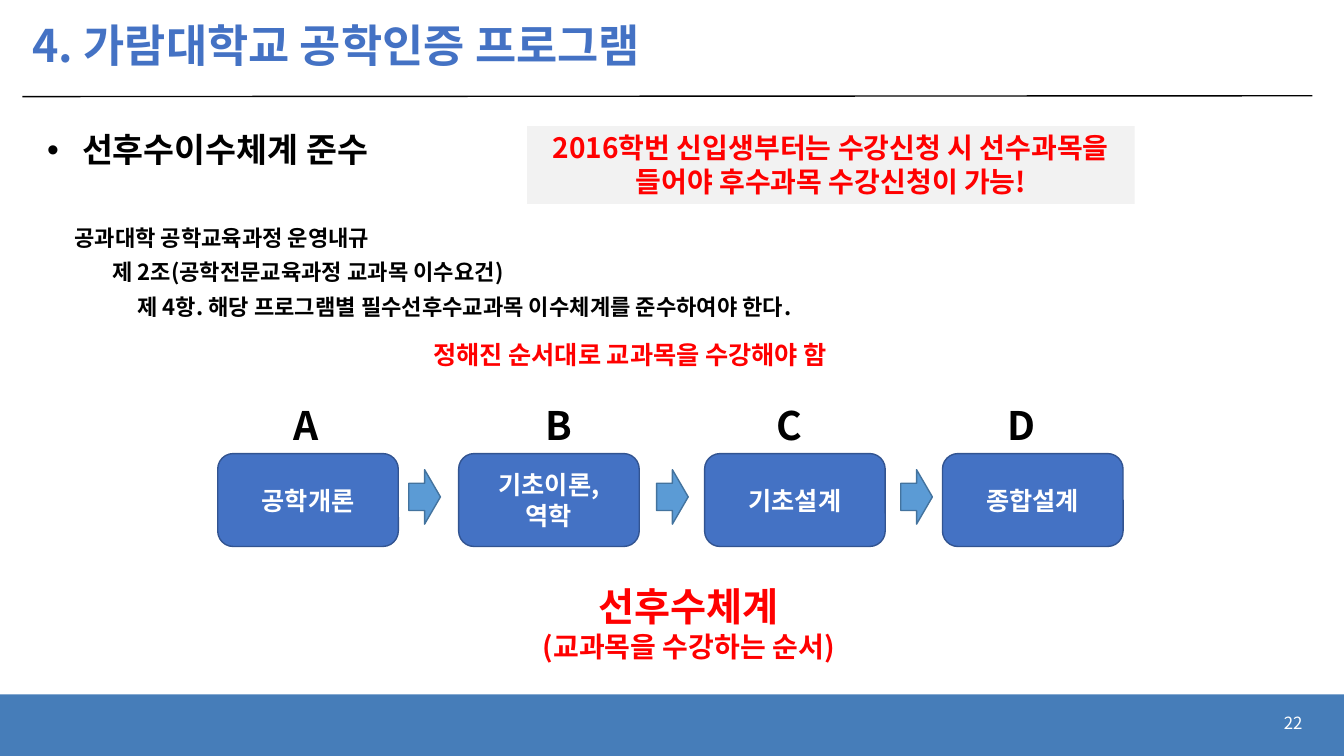
import pptx
import pptx.util
import pptx.dml.color
import pptx.enum.shapes
import pptx.enum.text
import pptx.oxml.ns
import lxml.etree

Pt = pptx.util.Pt
SHAPES = pptx.enum.shapes.MSO_SHAPE
ALIGN = pptx.enum.text.PP_ALIGN
ANCHOR = pptx.enum.text.MSO_ANCHOR

FONT = "Noto Sans CJK KR"
COLORS = {
    "black": "000000", "white": "FFFFFF", "red": "FF0000", "gray": "F2F2F2",
    "blue": "4472C4", "blue edge": "325491", "footer": "467DB9",
    "arrow": "5B9BD5", "arrow edge": "43739E",
}


def color(name):
    return pptx.dml.color.RGBColor.from_string(COLORS[name])


def add_xml(parent, tag, **attributes):
    child = lxml.etree.SubElement(parent, pptx.oxml.ns.qn(tag))
    for key, value in attributes.items():
        child.set(key, value)


class SlideBuilder:
    def __init__(self, slide):
        self.slide = slide

    def fill_text(self, shape, lines, ink, align=ALIGN.LEFT, anchor=ANCHOR.TOP,
                  bold=True, wrap=True, spacing=1.0):
        """Fill a shape with (text, size, indent) lines, one paragraph each."""
        frame = shape.text_frame
        frame.word_wrap = wrap
        frame.auto_size = pptx.enum.text.MSO_AUTO_SIZE.NONE
        frame.vertical_anchor = anchor
        for index, (text, size, indent) in enumerate(lines):
            para = frame.add_paragraph() if index else frame.paragraphs[0]
            para.alignment = align
            para.line_spacing = spacing
            if indent:
                para._p.get_or_add_pPr().set("marL", str(Pt(indent)))
            span = para.add_run()
            span.text = text
            span.font.name = FONT
            span.font.size = Pt(size)
            span.font.bold = bold
            span.font.color.rgb = color(ink)
            add_xml(span.font._element, "a:ea", typeface=FONT)
        return shape

    def title(self, place, text):
        title = self.slide.shapes.title
        title.left, title.top, title.width, title.height = map(Pt, place)
        self.fill_text(title, [(text, 32, 0)], "blue", anchor=ANCHOR.MIDDLE, spacing=0.9)

    def text(self, place, lines, ink="black", **style):
        box = self.slide.shapes.add_textbox(*map(Pt, place))
        return self.fill_text(box, lines, ink, **style)

    def bullet(self, place, text, size, hang):
        box = self.text(place, [(text, size, hang)], spacing=0.9)
        properties = box.text_frame.paragraphs[0]._p.get_or_add_pPr()
        properties.set("indent", str(Pt(-hang)))
        add_xml(properties, "a:buFont", typeface="Arial")
        add_xml(properties, "a:buChar", char="•")

    def shape(self, kind, place, fill, edge=None):
        shape = self.slide.shapes.add_shape(kind, *map(Pt, place))
        shape.shadow.inherit = False
        shape.fill.solid()
        shape.fill.fore_color.rgb = color(fill)
        if edge:
            shape.line.color.rgb = color(edge)
            shape.line.width = Pt(1)
        else:
            shape.line.fill.background()
        return shape

    def line(self, *ends):
        rule = self.slide.shapes.add_connector(
            pptx.enum.shapes.MSO_CONNECTOR.STRAIGHT, *map(Pt, ends))
        rule.line.color.rgb = color("black")
        rule.line.width = Pt(1)
        add_xml(rule._element.spPr, "a:effectLst")


def main():
    deck = pptx.Presentation()
    deck.slide_width, deck.slide_height = Pt(960), Pt(540)
    page = SlideBuilder(deck.slides.add_slide(deck.slide_layouts[5]))

    page.shape(SHAPES.RECTANGLE, (0, 496, 960, 44), "footer")
    page.line(16, 69, 937.5, 68.4)
    page.title((16, 7, 922, 54), "4. 가람대학교 공학인증 프로그램")
    page.text((721.5, 502, 216, 28.8), [("22", 12, 0)], "white",
              align=ALIGN.RIGHT, anchor=ANCHOR.MIDDLE, bold=False)

    page.bullet((26.6, 92, 340, 40), "선후수이수체계 준수", 24, 25)
    notice = page.shape(SHAPES.RECTANGLE, (376.5, 90, 434, 55.7), "gray")
    page.fill_text(notice, [("2016학번 신입생부터는 수강신청 시 선수과목을 들어야 후수과목 "
                             "수강신청이 가능!", 20, 0)], "red", align=ALIGN.CENTER)

    page.text((46, 151, 626, 88.5), [
        ("공과대학 공학교육과정 운영내규", 15.8, 0),
        ("제 2조(공학전문교육과정 교과목 이수요건)", 15.8, 27),
        ("제 4항. 해당 프로그램별 필수선후수교과목 이수체계를 준수하여야 한다.", 15.8, 45),
    ], spacing=1.3)
    page.text((302.4, 239, 329, 29), [("정해진 순서대로 교과목을 수강해야 함", 18, 0)],
              "red", wrap=False)

    # Each course: letter, letter left, box left, names
    courses = [
        ("A", 202.3, 155.5, ["공학개론"]),
        ("B", 382.3, 327.6, ["기초이론,", "역학"]),
        ("C", 547.9, 503.3, ["기초설계"]),
        ("D", 712.8, 673.2, ["종합설계"]),
    ]
    for letter, letter_left, left, names in courses:
        page.text((letter_left, 283, 35, 41), [(letter, 28, 0)], wrap=False)
        course = page.shape(SHAPES.ROUNDED_RECTANGLE, (left, 324, 129, 66.4),
                            "blue", "blue edge")
        page.fill_text(course, [(name, 18, 0) for name in names], "white",
                       align=ALIGN.CENTER, anchor=ANCHOR.MIDDLE)
    for left in (292, 469, 643.4):
        page.shape(SHAPES.RIGHT_ARROW, (left, 335.5, 22.6, 38.9), "arrow", "arrow edge")

    page.text((303, 412.6, 378, 65.5),
              [("선후수체계", 28, 0), ("(교과목을 수강하는 순서)", 20, 0)],
              "red", align=ALIGN.CENTER)
    deck.save("out.pptx")


if __name__ == "__main__":
    main()
